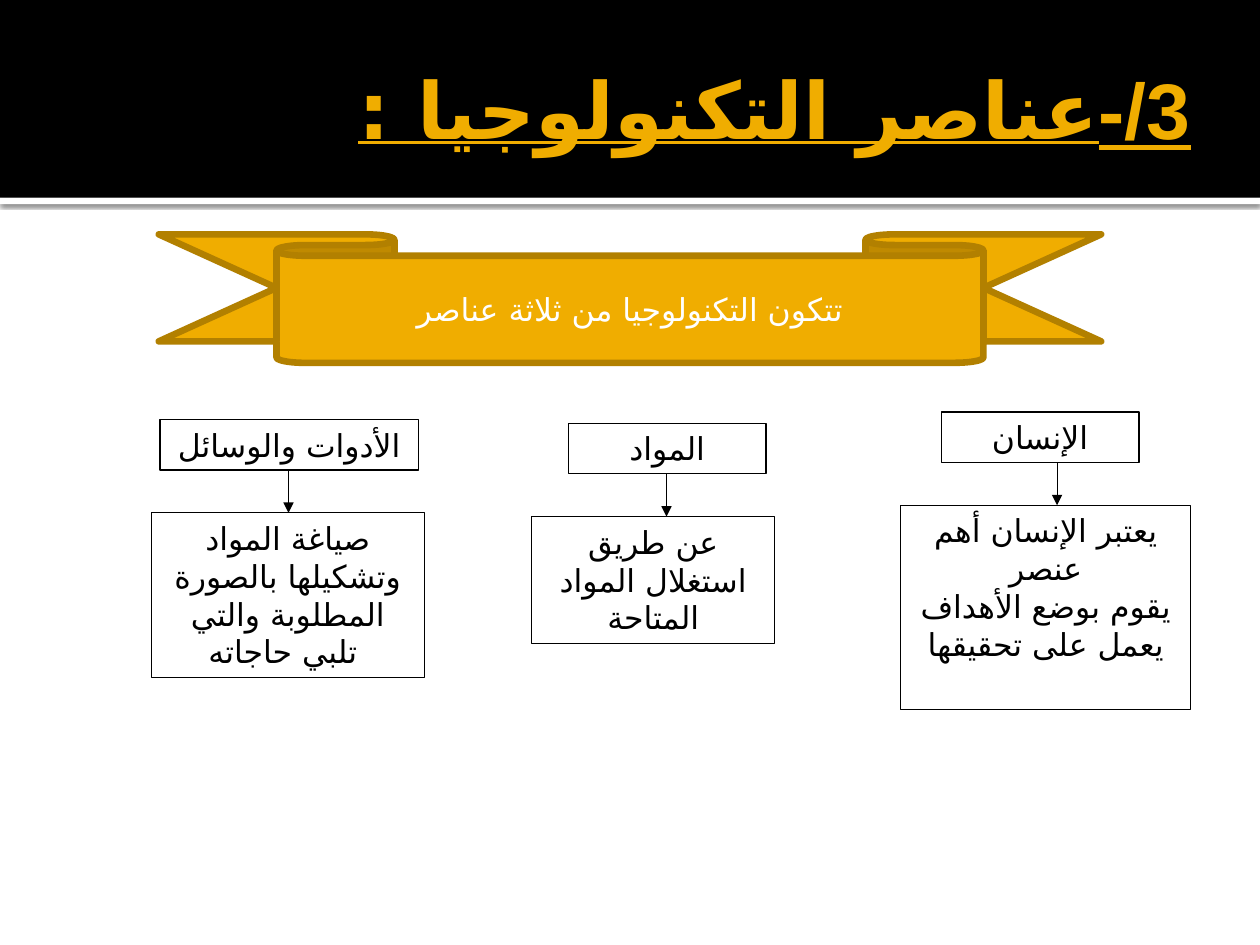
from lxml import etree
from pptx import Presentation
from pptx.dml.color import RGBColor
from pptx.enum.shapes import MSO_CONNECTOR, MSO_SHAPE
from pptx.enum.text import MSO_ANCHOR, PP_ALIGN
from pptx.oxml.ns import qn
from pptx.util import Inches, Pt

RECT, RIBBON = MSO_SHAPE.RECTANGLE, MSO_SHAPE.DOWN_RIBBON
LINE = MSO_CONNECTOR.STRAIGHT
TOP, MIDDLE = MSO_ANCHOR.TOP, MSO_ANCHOR.MIDDLE
CENTER, RIGHT = PP_ALIGN.CENTER, PP_ALIGN.RIGHT
COLS, ROWS = 10, 7.5  # grid of one-inch cells
HEX = {"gold": "F0AD00", "rim": "B28000", "black": "000000", "white": "FFFFFF"}
RGB = {name: RGBColor.from_string(code) for name, code in HEX.items()}
ARABIC, DIGITS = "DejaVu Sans", "Arial"  # complex-script faces


def write(shape, *lines, lead="", size=18, color="black", align=CENTER,
          anchor=TOP, bold=False, under=False, rtl=False):
    """Fill a shape with paragraphs; lead is a number before the first."""
    frame = shape.text_frame
    frame.word_wrap = True
    frame.vertical_anchor = anchor
    for i, line in enumerate(lines):
        para = frame.paragraphs[0] if i == 0 else frame.add_paragraph()
        para.alignment = align
        if rtl:
            para._p.get_or_add_pPr().set("rtl", "1")
        pieces = [(line, ARABIC)]
        if lead and i == 0:
            pieces.insert(0, (lead, DIGITS))
        for text, face in pieces:
            run = para.add_run()
            run.text = text
            font = run.font
            font.name, font.size = "Calibri", Pt(size)
            font.bold, font.underline = bold, under
            font.color.rgb = RGB[color]
            etree.SubElement(font._element, qn("a:cs"), typeface=face)


def draw(kind, x, y, w, h, fill=None, rim=None, width=0.75):
    """Add a shape at grid place x, y, with no fill or no line unless named."""
    shape = slide.shapes.add_shape(kind, *map(Inches, (x, y, w, h)))
    shape.shadow.inherit = False
    if fill:
        shape.fill.solid()
        shape.fill.fore_color.rgb = RGB[fill]
    else:
        shape.fill.background()
    if rim:
        shape.line.color.rgb = RGB[rim]
        shape.line.width = Pt(width)
    else:
        shape.line.fill.background()
    return shape


deck = Presentation()
deck.slide_width, deck.slide_height = Inches(COLS), Inches(ROWS)
slide = deck.slides.add_slide(deck.slide_layouts[6])

# Header band with a shaded white edge
edge = draw(RECT, 0, 1.57, COLS, 0.05, fill="white")
glow = etree.SubElement(
    edge._element.spPr.find(qn("a:effectLst")), qn("a:outerShdw"),
    blurRad=str(Pt(2.5)), dist=str(Pt(0.8)), dir="5400000", rotWithShape="0")
tint = etree.SubElement(glow, qn("a:srgbClr"), val=HEX["black"])
etree.SubElement(tint, qn("a:alpha"), val="60000")
draw(RECT, 0, 0, COLS, 1.57, fill="black")

title = slide.shapes.add_textbox(*map(Inches, (0.5, 0.17, 9, 1.37)))
title.text_frame.margin_right = Inches(0.05)
write(title, "عناصر التكنولوجيا :", lead="3/-", size=45, color="gold",
      align=RIGHT, anchor=MIDDLE, bold=True, under=True, rtl=True)

banner = draw(RIBBON, 1.26, 1.86, 7.48, 1.02, fill="gold", rim="rim", width=3.78)
banner.adjustments[0], banner.adjustments[1] = 0.167, 0.75
write(banner, "تتكون التكنولوجيا من ثلاثة عناصر", color="white", anchor=MIDDLE)

# Each element: name, name box (x, y, w), arrow x, detail box (x, w, h), details
NAME_H, GAP = 0.4, 0.34
parts = [
    ("الإنسان", (7.47, 3.27, 1.57), 8.39, (7.15, 2.3, 1.62),
     ["يعتبر الإنسان أهم عنصر", "يقوم بوضع الأهداف يعمل على تحقيقها"]),
    ("المواد", (4.51, 3.36, 1.57), 5.29, (4.22, 1.93, 1.01),
     ["عن طريق استغلال المواد المتاحة"]),
    ("الأدوات والوسائل", (1.27, 3.33, 2.05), 2.29, (1.2, 2.17, 1.31),
     ["صياغة المواد وتشكيلها بالصورة المطلوبة والتي تلبي حاجاته "]),
]
for name, (x, y, w), mid, (left, wide, high), lines in parts:
    write(draw(RECT, x, y, w, NAME_H, rim="black"), name)
    start = y + NAME_H
    end = start + GAP
    write(draw(RECT, left, end, wide, high, rim="black"), *lines)
    arrow = slide.shapes.add_connector(LINE, *map(Inches, (mid, start, mid, end)))
    arrow.line.color.rgb = RGB["black"]
    arrow.line.width = Pt(0.5)
    etree.SubElement(arrow.line._get_or_add_ln(), qn("a:tailEnd"), type="triangle")
    etree.SubElement(arrow._element.spPr, qn("a:effectLst"))

deck.save("out.pptx")
